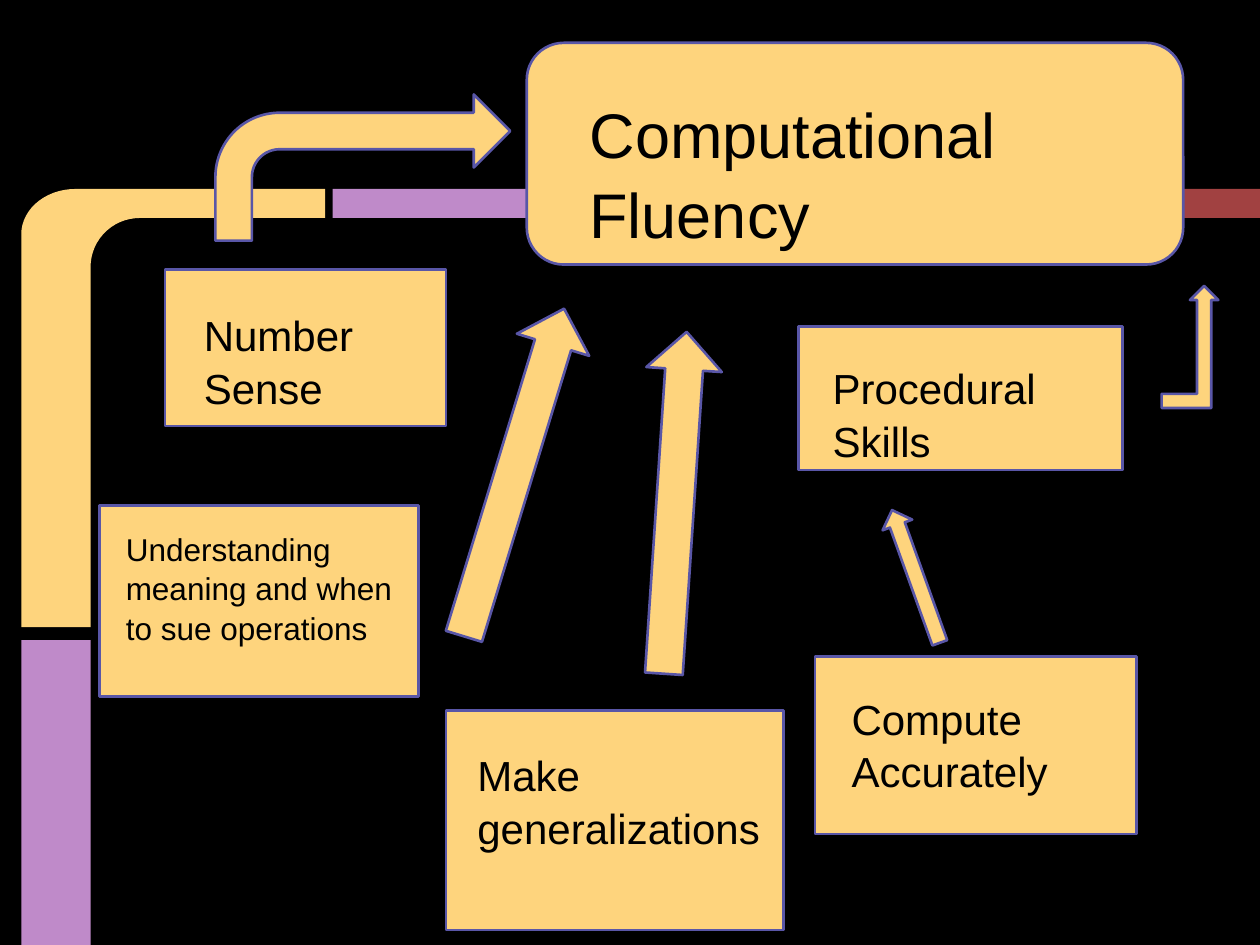
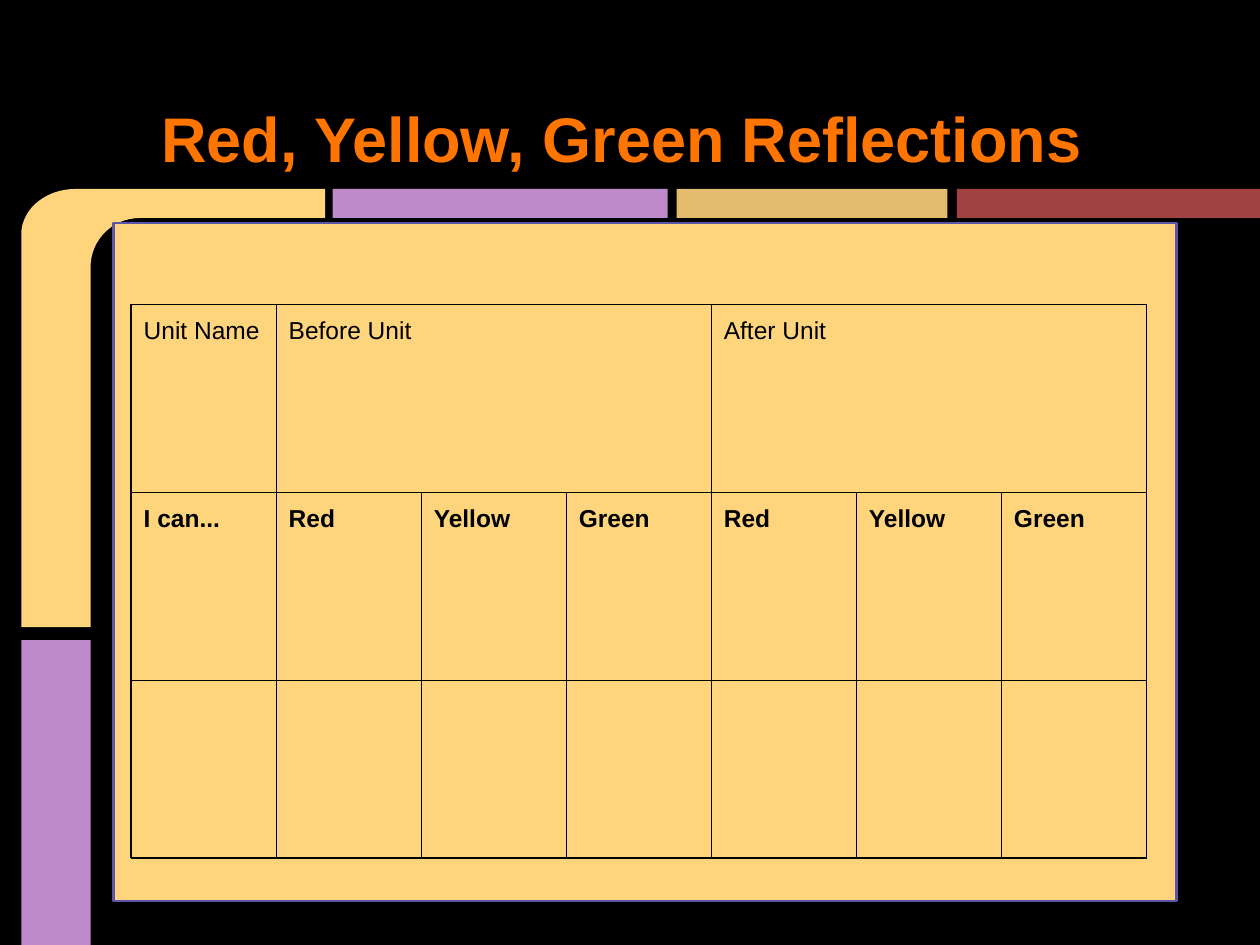
from dataclasses import dataclass
from math import cos, radians, sin

from lxml.etree import SubElement
from pptx import Presentation
from pptx.dml.color import RGBColor
from pptx.enum.shapes import MSO_SHAPE as Kind
from pptx.enum.text import MSO_ANCHOR as Anchor, MSO_AUTO_SIZE as Fit, PP_ALIGN as Align
from pptx.oxml.ns import qn
from pptx.util import Pt


@dataclass(frozen=True)
class Theme:
    font: str = "Arial"
    back: str = "000000"
    ink: str = "000000"
    gold: str = "FED47D"
    edge: str = "5956A7"
    lilac: str = "BF8AC9"
    sand: str = "E3BC6D"
    brick: str = "A14141"
    title: str = "FF7500"
    head: int = 36
    node: int = 24
    note: int = 18
    cell: int = 14
    line: float = 1.5
    rule: float = 0.75
    inset: float = 7.2
    lead: float = 1.05


T = Theme()

# Boxes are (left, top, width, height) in points.
BANDS = [
    (T.lilac, (12.2, 365.8, 39.6, 174.2)),
    (T.lilac, (190.1, 108, 191.5, 16.6)),
    (T.sand, (386.6, 108, 154.8, 16.6)),
    (T.brick, (546.8, 108, 173.2, 16.6)),
]

# Card shape, card box, label box, type size, label lines
NODES = [
    (Kind.RECTANGLE, (94.3, 154.1, 160.6, 89.3),
     (109.4, 168.5, 139, 66.2), T.node, ["Number Sense"]),
    (Kind.RECTANGLE, (465.8, 375.1, 183.6, 101.5),
     (479.5, 387.4, 159.1, 82.1), T.node, ["Compute", "Accurately"]),
    (Kind.RECTANGLE, (56.9, 288.7, 182.2, 109.4),
     (64.8, 294.5, 166.3, 98.6), T.note,
     ["Understanding meaning and when to sue operations"]),
    (Kind.RECTANGLE, (456.5, 186.5, 185, 82.1),
     (468.7, 198.7, 166.3, 63.4), T.node, ["Procedural Skills"]),
    (Kind.RECTANGLE, (254.9, 406.1, 193, 125.3),
     (265.7, 419.8, 180.7, 98.6), T.node, ["Make generalizations"]),
    (Kind.ROUNDED_RECTANGLE, (301, 24.5, 375.1, 126.7),
     (329.8, 45.4, 288, 36), T.head, ["Computational Fluency"]),
]

# Arrow shape, box, turn in degrees, adjustments
ARROWS = [
    (Kind.BENT_ARROW, (123.1, 54, 168.5, 83.5), 0, (0.25, 0.25, 0.25, 0.44)),
    (Kind.RIGHT_ARROW, (288, 265.7, 195.8, 43.2), 273.8, (0.5, 0.5)),
    (Kind.RIGHT_ARROW, (195.8, 248.4, 195.8, 43.2), 287, (0.5, 0.5)),
    (Kind.RIGHT_ARROW, (483.1, 320.4, 80.6, 18), 250.2, (0.5, 0.5)),
    (Kind.BENT_UP_ARROW, (663.8, 163.4, 32.4, 69.8), 0, (0.25, 0.25, 0.25)),
]

TITLE = "Red, Yellow, Green Reflections"
TITLE_BOX = (67, 17.3, 616.3, 90)
PANEL = (64.8, 127.4, 607.7, 387.4)
GRID_AT = (74.9, 174.2)
COL = 82.9
ROWS = [107.3, 107.3, 101.5]
UNITS = ["Before Unit", "After Unit"]
LIGHTS = ["Red", "Yellow", "Green"]


def pts(vals):
    return [Pt(v) for v in vals]


def color(code):
    return RGBColor.from_string(code)


def write(para, text, size, ink=T.ink, bold=False):
    run = para.add_run()
    run.text = text
    font = run.font
    font.name, font.size, font.bold = T.font, Pt(size), bold
    font.color.rgb = color(ink)


def pad(part):
    """Give a text frame or a cell the same inset on all sides."""
    part.margin_left = part.margin_right = Pt(T.inset)
    part.margin_top = part.margin_bottom = Pt(T.inset)


def paint(shape, fill, edge=None):
    shape.shadow.inherit = False
    shape.fill.solid()
    shape.fill.fore_color.rgb = color(fill)
    if edge:
        shape.line.color.rgb = color(edge)
        shape.line.width = Pt(T.line)
    else:
        shape.line.fill.background()


def add_card(slide, kind, box):
    card = slide.shapes.add_shape(kind, *pts(box))
    paint(card, T.gold, T.edge)
    return card


def add_label(slide, box, size, lines):
    frame = slide.shapes.add_textbox(*pts(box)).text_frame
    frame.word_wrap = True
    pad(frame)
    for i, line in enumerate(lines):
        para = frame.add_paragraph() if i else frame.paragraphs[0]
        para.line_spacing = T.lead
        write(para, line, size)


def arc(x, y, wide, high, start, end):
    """Points on an ellipse around (x, y), in 6 degree steps."""
    step = 6 if end > start else -6
    return [(x + wide * cos(radians(a)), y + high * sin(radians(a)))
            for a in range(start, end + step, step)]


def add_frame(slide):
    """Draw the curved corner and the colour bands."""
    path = [(51.8, 358.4), (12.2, 358.4)]
    path += arc(43.2, 133.9, 31, 25.9, 180, 270)
    path += [(185.8, 108), (185.8, 124.6)]
    path += arc(79.9, 152.6, 28.1, 28, 270, 180)
    first, *rest = [pts(spot) for spot in path]
    pen = slide.shapes.build_freeform(*first)
    pen.add_line_segments(rest, close=True)
    paint(pen.convert_to_shape(), T.gold)
    for fill, box in BANDS:
        paint(slide.shapes.add_shape(Kind.RECTANGLE, *pts(box)), fill)


def add_title(slide):
    title = slide.shapes.title
    title.left, title.top, title.width, title.height = pts(TITLE_BOX)
    frame = title.text_frame
    frame.auto_size, frame.word_wrap = Fit.NONE, True
    frame.vertical_anchor = Anchor.BOTTOM
    pad(frame)
    frame.margin_left = Pt(T.inset + 18)
    para = frame.paragraphs[0]
    para.alignment = Align.LEFT
    write(para, TITLE, T.head, T.title, True)


def rule(cell):
    """Clear the fill of a cell and line its four sides."""
    cell.fill.background()
    props = cell._tc.get_or_add_tcPr()
    for i, side in enumerate(("a:lnL", "a:lnR", "a:lnT", "a:lnB")):
        line = SubElement(props, qn(side), w=str(Pt(T.rule)))
        fill = SubElement(line, qn("a:solidFill"))
        SubElement(fill, qn("a:srgbClr"), val=T.ink)
        props.insert(i, line)


def add_grid(slide):
    span = len(LIGHTS)
    count = 1 + span * len(UNITS)
    size = (COL * count, sum(ROWS))
    grid = slide.shapes.add_table(len(ROWS), count, *pts(GRID_AT + size)).table
    grid.first_row = grid.horz_banding = False
    for col in grid.columns:
        col.width = Pt(COL)
    for row, high in zip(grid.rows, ROWS):
        row.height = Pt(high)
    for cell in grid.iter_cells():
        pad(cell)
        rule(cell)

    texts = {(0, 0): "Unit Name", (1, 0): "I can..."}
    for i, unit in enumerate(UNITS):
        left = 1 + i * span
        grid.cell(0, left).merge(grid.cell(0, left + span - 1))
        texts[0, left] = unit
        for j, light in enumerate(LIGHTS):
            texts[1, left + j] = light
    for (row, col), text in texts.items():
        para = grid.cell(row, col).text_frame.paragraphs[0]
        write(para, text, T.cell, bold=row == 1)


def add_fluency(deck):
    slide = deck.slides.add_slide(deck.slide_layouts[6])
    add_frame(slide)
    for kind, box, *_ in NODES:
        add_card(slide, kind, box)
    for _, _, box, size, lines in NODES:
        add_label(slide, box, size, lines)
    for kind, box, turn, bends in ARROWS:
        arrow = add_card(slide, kind, box)
        arrow.rotation = turn
        for i, bend in enumerate(bends):
            arrow.adjustments[i] = bend


def add_review(deck):
    slide = deck.slides.add_slide(deck.slide_layouts[5])
    add_frame(slide)
    add_title(slide)
    add_card(slide, Kind.RECTANGLE, PANEL)
    add_grid(slide)


def main():
    deck = Presentation()
    deck.slide_width, deck.slide_height = Pt(720), Pt(540)
    back = deck.slide_master.background.fill
    back.solid()
    back.fore_color.rgb = color(T.back)
    add_fluency(deck)
    add_review(deck)
    deck.save("out.pptx")


if __name__ == "__main__":
    main()
